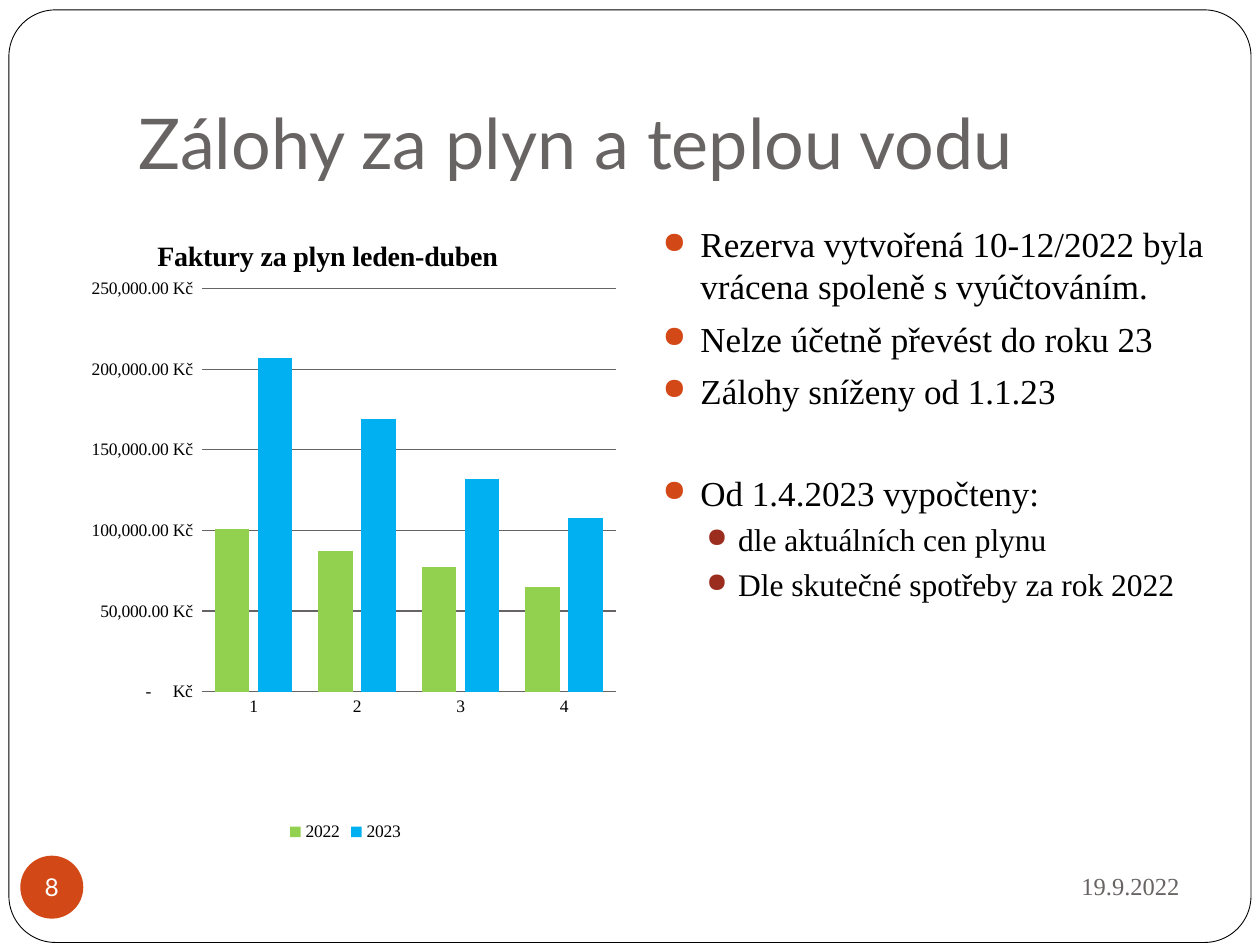
from dataclasses import dataclass
from typing import Optional

from lxml.etree import SubElement
from pptx import Presentation
from pptx.chart.data import CategoryChartData
from pptx.dml.color import RGBColor
from pptx.enum.chart import XL_CHART_TYPE as ChartType
from pptx.enum.chart import XL_LEGEND_POSITION as LegendPosition
from pptx.enum.chart import XL_TICK_MARK as TickMark
from pptx.enum.shapes import MSO_SHAPE as Preset
from pptx.enum.text import MSO_ANCHOR as Anchor
from pptx.enum.text import PP_ALIGN as Align
from pptx.oxml.ns import qn
from pptx.util import Cm, Pt

BLACK = RGBColor(0x00, 0x00, 0x00)
WHITE = RGBColor(0xFF, 0xFF, 0xFF)
GRAY = RGBColor(0x69, 0x64, 0x64)
ORANGE = RGBColor(0xD3, 0x48, 0x17)
MAROON = RGBColor(0x9B, 0x2D, 0x1F)
GREEN = RGBColor(0x92, 0xD0, 0x50)
BLUE = RGBColor(0x00, 0xB0, 0xF0)

HEADING_FONT = "Lato"
BODY_FONT = "Times New Roman"
KC_FORMAT = (
    r'_-* #,##0.00\ "Kč"_-;\-* #,##0.00\ "Kč"_-;'
    r'_-* "-"??\ "Kč"_-;_-@_-'
)


@dataclass(frozen=True)
class Level:
    depth: int
    size: float
    margin: float
    hanging: float
    before: float
    bullet: RGBColor


@dataclass(frozen=True)
class Point:
    text: str
    level: Level
    before: Optional[float] = None


@dataclass(frozen=True)
class Year:
    name: str
    invoices: tuple
    color: RGBColor


MAIN = Level(0, 20, 0.76, 0.76, 5.8, ORANGE)
DETAIL = Level(1, 18, 1.52, 0.64, 3.7, MAROON)

POINTS = [
    Point("Rezerva vytvořená 10-12/2022 byla vrácena spoleně s vyúčtováním.", MAIN),
    Point("Nelze účetně převést do roku 23", MAIN),
    Point("Zálohy sníženy od 1.1.23", MAIN),
    Point("Od 1.4.2023 vypočteny:", MAIN, before=34.6),
    Point("dle aktuálních cen plynu", DETAIL),
    Point("Dle skutečné spotřeby za rok 2022", DETAIL),
]

YEARS = [
    Year("2022", (101000, 87000, 77000, 65000), GREEN),
    Year("2023", (207000, 169000, 132000, 108000), BLUE),
]


def style_font(font, *, size: float, name: str = BODY_FONT,
               color: RGBColor = BLACK, bold: bool = False) -> None:
    font.size = Pt(size)
    font.name = name
    font.bold = bold
    font.color.rgb = color


def write(paragraph, text: str, *, align: Align = Align.LEFT, **style) -> None:
    paragraph.alignment = align
    run = paragraph.add_run()
    run.text = text
    style_font(run.font, **style)


def add_frame(slide, left: float, top: float, width: float, height: float,
              anchor: Anchor = Anchor.TOP):
    frame = slide.shapes.add_textbox(
        Cm(left), Cm(top), Cm(width), Cm(height)).text_frame
    frame.word_wrap = True
    frame.vertical_anchor = anchor
    return frame


def add_panel(slide, preset: Preset, left: float, top: float,
              width: float, height: float, fill: RGBColor):
    panel = slide.shapes.add_shape(
        preset, Cm(left), Cm(top), Cm(width), Cm(height))
    panel.shadow.inherit = False
    panel.fill.solid()
    panel.fill.fore_color.rgb = fill
    panel.line.fill.background()
    return panel


def add_bullet(paragraph, level: Level) -> None:
    props = paragraph._p.get_or_add_pPr()
    props.set("marL", str(Cm(level.margin)))
    props.set("indent", str(-Cm(level.hanging)))
    color = SubElement(props, qn("a:buClr"))
    SubElement(color, qn("a:srgbClr"), val=str(level.bullet))
    SubElement(props, qn("a:buSzPct"), val="85000")
    SubElement(props, qn("a:buChar"), char="●")


def add_points(frame, points: list) -> None:
    for index, point in enumerate(points):
        paragraph = frame.add_paragraph() if index else frame.paragraphs[0]
        level = point.level
        paragraph.level = level.depth
        paragraph.space_before = Pt(point.before or level.before)
        write(paragraph, point.text, size=level.size)
        add_bullet(paragraph, level)


def place(element, index: int, **settings) -> None:
    for old in element.findall(qn("c:layout")):
        element.remove(old)
    layout = SubElement(element, qn("c:layout"))
    element.insert(index, layout)
    manual = SubElement(layout, qn("c:manualLayout"))
    for key, value in settings.items():
        SubElement(manual, qn(f"c:{key}"), val=str(value))


def add_invoice_chart(slide, years: list) -> None:
    data = CategoryChartData(number_format=KC_FORMAT)
    data.categories = ["1", "2", "3", "4"]
    for year in years:
        data.add_series(year.name, year.invoices)
    chart = slide.shapes.add_chart(
        ChartType.COLUMN_CLUSTERED, Cm(1.4), Cm(4.57), Cm(11.13), Cm(12.5),
        data).chart
    style_font(chart.font, size=10)

    chart.has_title = True
    write(chart.chart_title.text_frame.paragraphs[0],
          "Faktury za plyn leden-duben", size=16, bold=True, align=Align.CENTER)
    place(chart.chart_title._element, 1,
          xMode="edge", yMode="edge", x=0.15, y=0.01)

    chart.has_legend = True
    chart.legend.position = LegendPosition.BOTTOM
    chart.legend.include_in_layout = False

    plot = chart.plots[0]
    plot.gap_width = 75
    plot.overlap = -25
    plot.vary_by_categories = False
    for series, year in zip(plot.series, years):
        series.format.fill.solid()
        series.format.fill.fore_color.rgb = year.color

    months, amounts = chart.category_axis, chart.value_axis
    for axis in (months, amounts):
        axis.major_tick_mark = TickMark.NONE
        axis.minor_tick_mark = TickMark.NONE
    amounts.minimum_scale, amounts.maximum_scale = 0, 250000
    amounts.major_unit = 50000
    amounts.has_major_gridlines = True
    amounts.tick_labels.number_format = KC_FORMAT
    amounts.tick_labels.number_format_is_linked = False
    amounts.format.line.fill.background()
    for line in (months.format.line, amounts.major_gridlines.format.line):
        line.color.rgb = GRAY
        line.width = Pt(0.75)

    place(chart._chartSpace.chart.plotArea, 0,
          layoutTarget="inner", xMode="edge", yMode="edge",
          x=0.24, y=0.1, w=0.75, h=0.65)


def main() -> None:
    deck = Presentation()
    deck.slide_width, deck.slide_height = Cm(25.4), Cm(19.05)
    slide = deck.slides.add_slide(deck.slide_layouts[6])

    border = add_panel(slide, Preset.ROUNDED_RECTANGLE,
                       0.18, 0.2, 25.04, 18.8, WHITE)
    border.adjustments[0] = 0.05
    border.line.color.rgb = BLACK
    border.line.width = Pt(0.5)

    heading = add_frame(slide, 2.54, 0.76, 21.59, 3.18, Anchor.BOTTOM)
    heading.margin_bottom = Cm(0.25)
    write(heading.paragraphs[0], "Zálohy za plyn a teplou vodu",
          size=40, name=HEADING_FONT, color=GRAY)

    date = add_frame(slide, 17.15, 17.2, 6.88, 1.32, Anchor.MIDDLE)
    write(date.paragraphs[0], "19.9.2022",
          size=14, color=GRAY, align=Align.RIGHT)

    badge = add_panel(slide, Preset.OVAL, 0.41, 17.25, 1.27, 1.27, ORANGE)
    number = badge.text_frame
    number.word_wrap = False
    number.vertical_anchor = Anchor.MIDDLE
    number.margin_left = number.margin_right = Cm(0)
    number.margin_top = number.margin_bottom = Cm(0)
    write(number.paragraphs[0], "8", size=14, name=HEADING_FONT,
          color=WHITE, align=Align.CENTER)

    add_points(add_frame(slide, 13.11, 4.37, 11.51, 12.7), POINTS)
    add_invoice_chart(slide, YEARS)
    deck.save("out.pptx")


if __name__ == "__main__":
    main()
